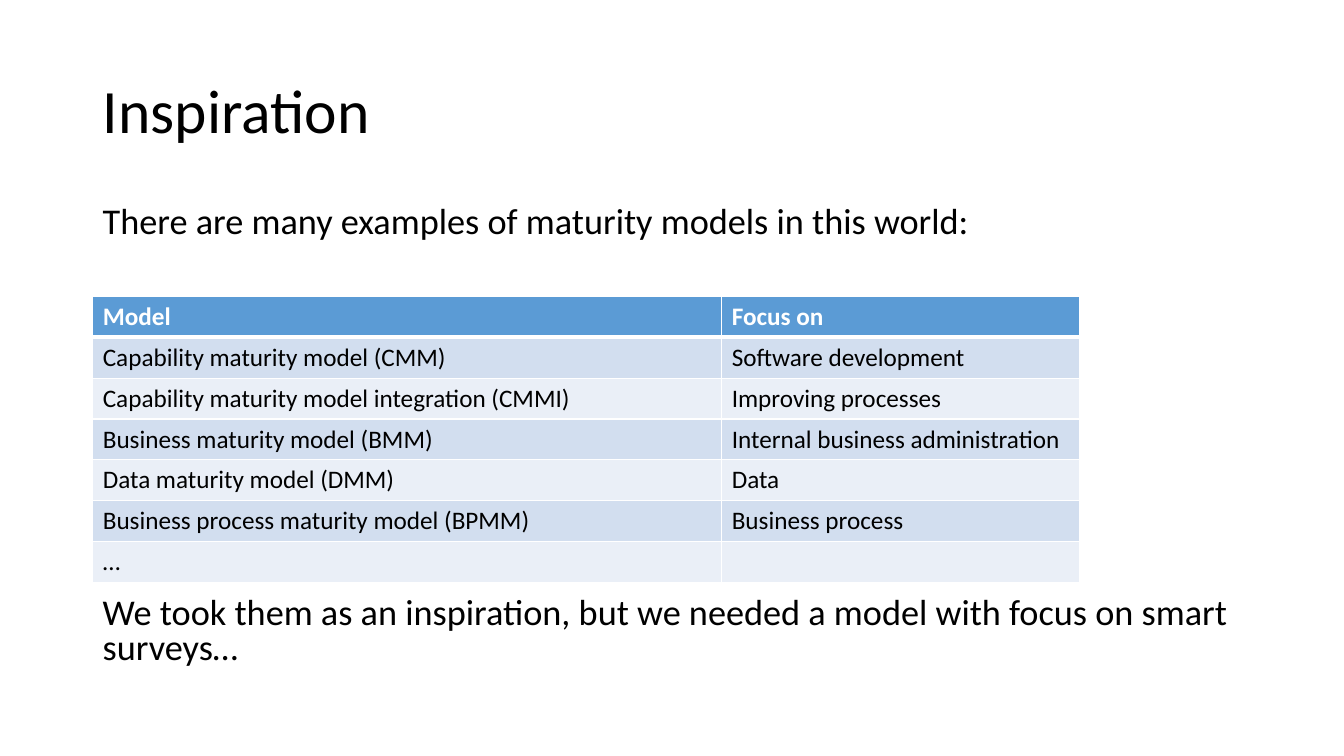
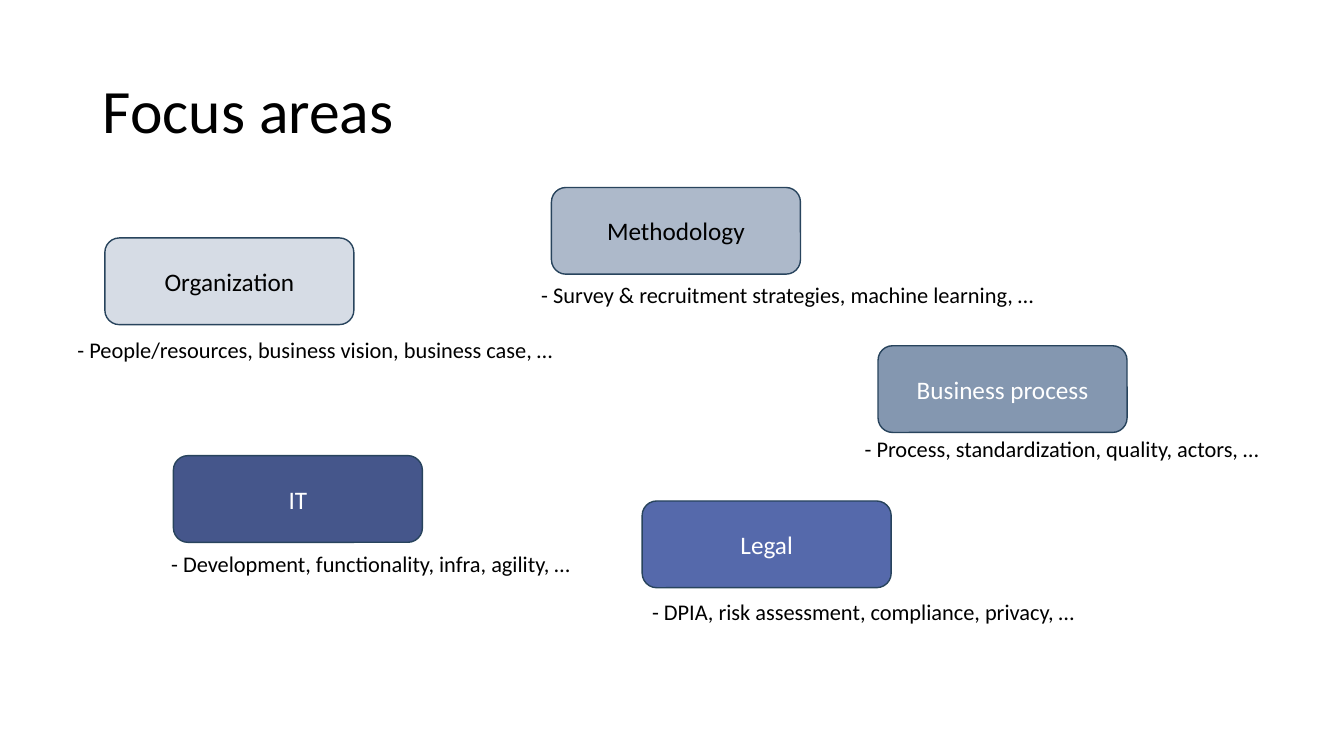
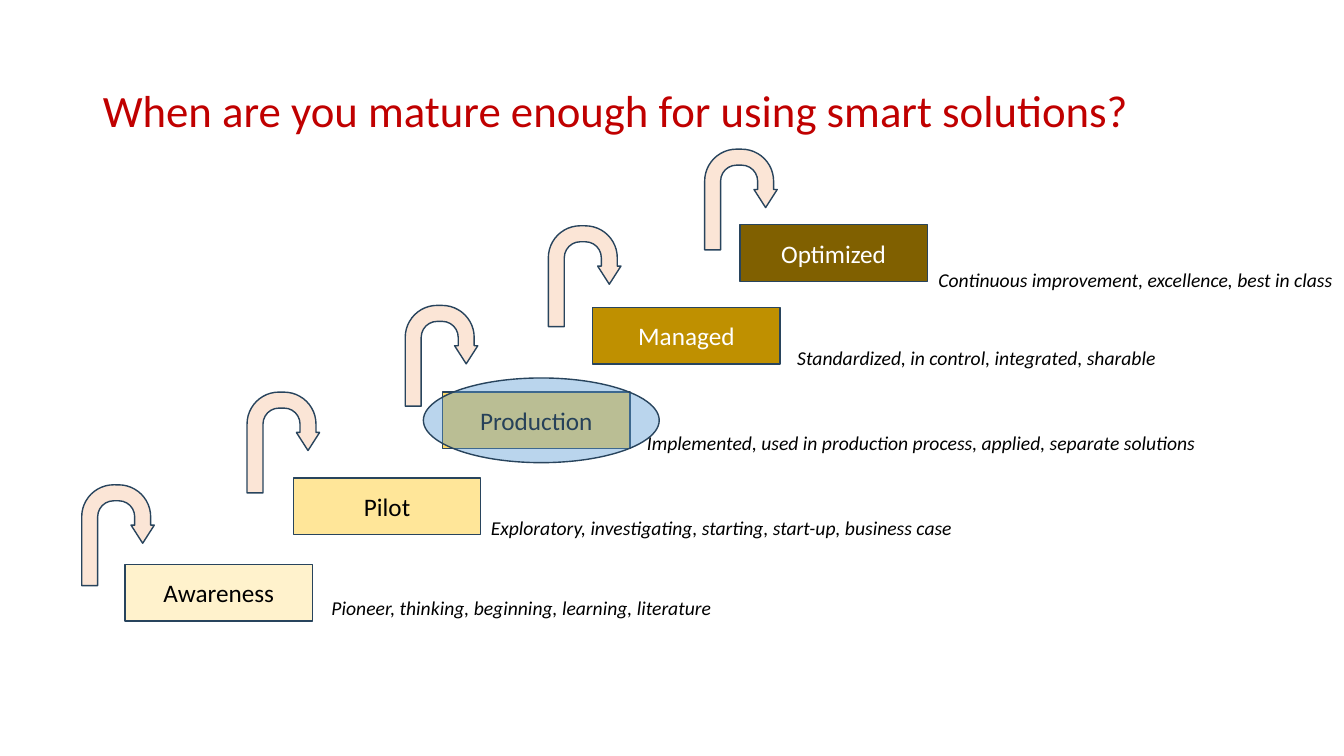
from dataclasses import dataclass
from typing import Any, NamedTuple

from lxml.etree import SubElement as Sub
from pptx import Presentation
from pptx.dml.color import RGBColor as RGB
from pptx.enum.shapes import MSO_SHAPE as Shape
from pptx.enum.text import MSO_ANCHOR as Anchor, MSO_AUTO_SIZE as Fit, PP_ALIGN as Align
from pptx.oxml.ns import qn
from pptx.util import Inches, Pt


@dataclass(frozen=True)
class Theme:
    """Colours, font and type sizes of the deck."""
    font: str = "Calibri"
    black: str = "000000"
    white: str = "FFFFFF"
    red: str = "C00000"
    blue: str = "5B9BD5"
    outline: str = "28445D"
    arrow: str = "FBE5D6"
    bands: tuple[str, str] = ("D2DEEF", "EAEFF7")
    title: float = 44
    question: float = 32
    body: float = 25.9
    label: float = 18
    area_note: float = 16
    step_note: float = 14


class Box(NamedTuple):
    """Left, top, width and height in percent of the slide."""
    x: float
    y: float
    w: float
    h: float


class Size(NamedTuple):
    w: float
    h: float


class Area(NamedTuple):
    name: str
    fill: str
    color: str
    spot: tuple[float, float]
    note: str
    note_spot: tuple[float, float]
    note_width: float


class Step(NamedTuple):
    name: str
    fill: str
    color: str
    spot: tuple[float, float]
    arrow_spot: tuple[float, float]
    note: str
    note_spot: tuple[float, float]
    note_width: float = 47.25


T = Theme()
WIDTH, HEIGHT = Inches(13.333), Inches(7.5)
LEFT, CONTENT_W = 6.9, 86.25
TITLE_BOX = Box(LEFT, 5.33, CONTENT_W, 19.33)

# Slide 1
BODY_LINES = [
    ("There are many examples of maturity models in this world:", 26.67),
    ("We took them as an inspiration, but we needed a model with focus on smart surveys…", 78.4),
]
MODEL_COLS = (46.8, 26.63)
MODEL_TOP, MODEL_ROW = 39.2, 5.41
MODELS = [
    ("Model", "Focus on"),
    ("Capability maturity model (CMM)", "Software development"),
    ("Capability maturity model integration (CMMI)", "Improving processes"),
    ("Business maturity model (BMM)", "Internal business administration"),
    ("Data maturity model (DMM)", "Data"),
    ("Business process maturity model (BPMM)", "Business process"),
    ("…", ""),
]

# Slide 2
AREA_SIZE = Size(18.53, 11.47)
AREAS = [
    Area("Organization", "D6DCE5", T.black, (7.8, 31.47),
         "- People/resources, business vision, business case, …", (5.03, 43.87), 38.7),
    Area("Methodology", "ADB9CA", T.black, (41.03, 24.8),
         "- Survey & recruitment strategies, machine learning, …", (39.53, 36.53), 45.83),
    Area("Business process", "8497B0", T.white, (65.33, 45.73),
         "- Process, standardization, quality, actors, …", (63.6, 56.93), 33.75),
    Area("IT", "45568B", T.white, (12.9, 60.27),
         "- Development, functionality, infra, agility, …", (12, 72.13), 34.05),
    Area("Legal", "5569AB", T.white, (47.78, 66.27),
         "- DPIA, risk assessment, compliance, privacy, …", (47.78, 78.4), 34.8),
]

# Slide 3
STEP_SIZE, ARROW_SIZE = Size(13.95, 7.47), Size(5.4, 13.33)
ARROW_BENDS = (0.22, 0.16, 0.25, 0.44, 0.58)
FOCUS_BOX = Box(31.5, 50, 17.55, 11.2)
STEPS = [
    Step("Awareness", "FFF2CC", T.black, (9.3, 74.67), (6.08, 64.13),
         "Pioneer, thinking, beginning, learning, literature", (23.93, 78.13)),
    Step("Pilot", "FFE699", T.black, (21.83, 63.2), (18.38, 51.87),
         "Exploratory, investigating, starting, start-up, business case", (35.78, 67.6)),
    Step("Production", "FFD966", T.black, (32.93, 51.87), (30.15, 40.4),
         "Implemented, used in production process, applied, separate solutions", (47.4, 56.4)),
    Step("Managed", "BF9000", T.white, (44.1, 40.67), (40.8, 29.87),
         "Standardized, in control, integrated, sharable", (58.58, 45.07), 39.3),
    Step("Optimized", "806000", T.white, (55.05, 29.73), (52.43, 19.73),
         "Continuous improvement, excellence, best in class", (69.08, 34.8), 30.9),
]


# Helpers
def across(share: float) -> int:
    return round(WIDTH * share / 100)


def down(share: float) -> int:
    return round(HEIGHT * share / 100)


def place(box: Box) -> tuple[int, int, int, int]:
    return across(box.x), down(box.y), across(box.w), down(box.h)


def set_all(target: Any, values: dict[str, Any]) -> None:
    for name, value in values.items():
        setattr(target, name, value)


def write(tf: Any, text: str, size: float, color: str = T.black,
          para: dict[str, Any] | None = None, **font: Any) -> None:
    p = tf.paragraphs[0]
    set_all(p, para or {})
    r = p.add_run()
    r.text = text
    set_all(r.font, {"name": T.font, "size": Pt(size), **font})
    r.font.color.rgb = RGB.from_string(color)


def add_slide(prs: Any, title: str, size: float = T.title, color: str = T.black) -> Any:
    s = prs.slides.add_slide(prs.slide_layouts[5])
    sp = s.shapes.title
    set_all(sp, dict(zip(("left", "top", "width", "height"), place(TITLE_BOX))))
    set_all(sp.text_frame, {"word_wrap": True, "auto_size": Fit.NONE,
                            "vertical_anchor": Anchor.MIDDLE})
    write(sp.text_frame, title, size, color,
          {"alignment": Align.LEFT, "line_spacing": 0.9})
    return s


def add_text(s: Any, box: Box, text: str, size: float,
             para: dict[str, Any] | None = None, **font: Any) -> None:
    tf = s.shapes.add_textbox(*place(box)).text_frame
    set_all(tf, {"word_wrap": True, "margin_right": 0})
    write(tf, text, size, para=para, **font)


def add_shape(s: Any, kind: Shape, box: Box, fill: str,
              text: str = "", color: str = T.black) -> Any:
    sp = s.shapes.add_shape(kind, *place(box))
    sp.shadow.inherit = False
    sp.fill.solid()
    sp.fill.fore_color.rgb = RGB.from_string(fill)
    sp.line.color.rgb = RGB.from_string(T.outline)
    sp.line.width = Pt(1)
    if text:
        sp.text_frame.vertical_anchor = Anchor.MIDDLE
        write(sp.text_frame, text, T.label, color, {"alignment": Align.CENTER})
    return sp


def set_borders(cell: Any, bottom: float, top: float) -> None:
    props = cell._tc.get_or_add_tcPr()
    widths = {"a:lnL": 1, "a:lnR": 1, "a:lnT": top, "a:lnB": bottom}
    for i, (tag, width) in enumerate(widths.items()):
        ln = props.makeelement(qn(tag), {"w": str(Pt(width))})
        Sub(Sub(ln, qn("a:solidFill")), qn("a:srgbClr"), val=T.white)
        props.insert(i, ln)


# Slides
def inspiration(prs: Any) -> None:
    s = add_slide(prs, "Inspiration")
    for text, top in BODY_LINES:
        add_text(s, Box(LEFT, top, CONTENT_W, 11), text, T.body, {"line_spacing": 0.8})

    box = Box(LEFT, MODEL_TOP, sum(MODEL_COLS), MODEL_ROW * len(MODELS))
    table = s.shapes.add_table(len(MODELS), len(MODEL_COLS), *place(box)).table
    for col, width in zip(table.columns, MODEL_COLS):
        col.width = across(width)
    for i, row in enumerate(MODELS):
        table.rows[i].height = down(MODEL_ROW)
        head = i == 0
        for j, text in enumerate(row):
            cell = table.cell(i, j)
            cell.fill.solid()
            cell.fill.fore_color.rgb = RGB.from_string(T.blue if head else T.bands[(i - 1) % 2])
            set_borders(cell, bottom=3 if head else 1, top=3 if i == 1 else 1)
            if text:
                write(cell.text_frame, text, T.label, T.white if head else T.black, bold=head)


def focus_areas(prs: Any) -> None:
    s = add_slide(prs, "Focus areas")
    for a in AREAS:
        add_shape(s, Shape.ROUNDED_RECTANGLE, Box(*a.spot, *AREA_SIZE), a.fill, a.name, a.color)
        add_text(s, Box(*a.note_spot, a.note_width, 4.93), a.note, T.area_note)


def maturity_steps(prs: Any) -> None:
    s = add_slide(prs, "When are you mature enough for using smart solutions?",
                  T.question, T.red)
    for st in STEPS:
        add_shape(s, Shape.RECTANGLE, Box(*st.spot, *STEP_SIZE), st.fill, st.name, st.color)
        arrow = add_shape(s, Shape.U_TURN_ARROW, Box(*st.arrow_spot, *ARROW_SIZE), T.arrow)
        for i, bend in enumerate(ARROW_BENDS):
            arrow.adjustments[i] = bend
        add_text(s, Box(*st.note_spot, st.note_width, 4.53), st.note, T.step_note, italic=True)

    # Translucent highlight over the production step
    focus = add_shape(s, Shape.OVAL, FOCUS_BOX, T.blue)
    color = focus._element.spPr.find(qn("a:solidFill")).find(qn("a:srgbClr"))
    Sub(color, qn("a:alpha"), val="42000")


def main() -> None:
    prs = Presentation()
    set_all(prs, {"slide_width": WIDTH, "slide_height": HEIGHT})
    for build in (inspiration, focus_areas, maturity_steps):
        build(prs)
    prs.save("out.pptx")


if __name__ == "__main__":
    main()
